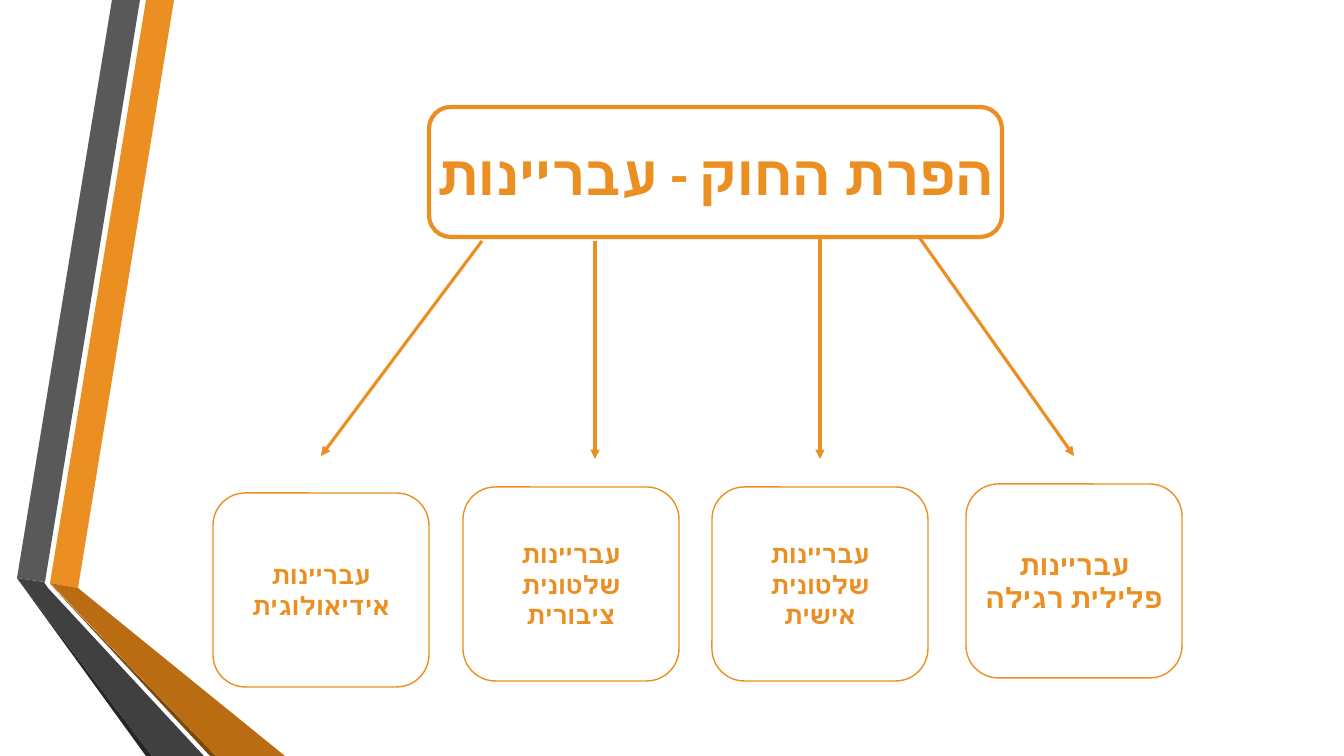
from lxml import etree
from pptx import Presentation
from pptx import util as u
from pptx.dml.color import RGBColor
from pptx.enum import shapes, text
from pptx.oxml.ns import qn

# Content, lengths in px
PX = 9144000 / 1008
FONT, ORANGE = "Calibri", "EB8F22"
BANDS = [
    (ORANGE, [(50, 583), (78, 588), (174, 0), (146, 0)]),
    ("595959", [(140, 0), (112, 0), (17, 578), (45, 582)]),
    ("262626", [(17, 578), (146, 756), (152, 756)]),
    ("7B480B", [(50, 584), (210, 756), (216, 756)]),
    ("B96C11", [(50, 583), (216, 756), (285, 756), (78, 588)]),
    ("404040", [(204, 756), (48, 588), (44, 582), (17, 578), (152, 756)]),
]
TITLE = "הפרת החוק - עבריינות"
TITLE_AREA = (163, 76, 1105, 194)
FRAME = (429, 107, 573, 130)
ARROWS = [
    (919, 237, 1074, 456),
    (820, 237, 820, 459),
    (595, 241, 595, 459),
    (482, 241, 321, 456),
]
CARD_W, CARD_H = 216, 194
CARDS = [  # left, top, text, size
    (213, 493, "עבריינות אידיאולוגית", 18),
    (966, 484, "עבריינות פלילית רגילה", 20),
    (463, 487, "עבריינות שלטונית ציבורית", 18),
    (712, 487, "עבריינות שלטונית אישית", 18),
]


def px(*nums):
    return [u.Emu(round(n * PX)) for n in nums]


def paint(color, hue):
    color.rgb = RGBColor.from_string(hue)


def write(shape, words, size, rtl=False):
    frame = shape.text_frame
    frame.word_wrap = True
    frame.vertical_anchor = text.MSO_ANCHOR.MIDDLE
    para = frame.paragraphs[0]
    para.alignment = text.PP_ALIGN.CENTER
    if rtl:
        para._p.get_or_add_pPr().set("rtl", "1")
    run = para.add_run()
    run.text = words
    run.font.size = u.Pt(size)
    run.font.bold = True
    run.font.name = FONT
    paint(run.font.color, ORANGE)
    # Hebrew takes the complex-script font
    etree.SubElement(run._r.get_or_add_rPr(), qn("a:cs"), typeface=FONT)


def outline(area, width):
    box = slide.shapes.add_shape(shapes.MSO_SHAPE.ROUNDED_RECTANGLE, *px(*area))
    box.shadow.inherit = False
    box.fill.background()
    paint(box.line.color, ORANGE)
    box.line.width = u.Pt(width)
    return box


deck = Presentation()
deck.slide_width, deck.slide_height = px(1344, 756)
slide = deck.slides.add_slide(deck.slide_layouts[6])

# Folded bands on the left
for hue, points in BANDS:
    pen = slide.shapes.build_freeform(*points[0], scale=PX)
    pen.add_line_segments(points[1:], close=True)
    band = pen.convert_to_shape()
    band.shadow.inherit = False
    band.fill.solid()
    paint(band.fill.fore_color, hue)
    band.line.fill.background()

# Title
write(slide.shapes.add_textbox(*px(*TITLE_AREA)), TITLE, 40, rtl=True)

# Arrows down to the cards
for ends in ARROWS:
    arrow = slide.shapes.add_connector(shapes.MSO_CONNECTOR.STRAIGHT, *px(*ends))
    paint(arrow.line.color, ORANGE)
    arrow.line.width = u.Pt(2.25)
    etree.SubElement(arrow.line._get_or_add_ln(), qn("a:tailEnd"), type="triangle")
    etree.SubElement(arrow._element.spPr, qn("a:effectLst"))

# Title frame and cards
outline(FRAME, 3)
for left, top, words, size in CARDS:
    write(outline((left, top, CARD_W, CARD_H), 1), words, size)

deck.save("out.pptx")
